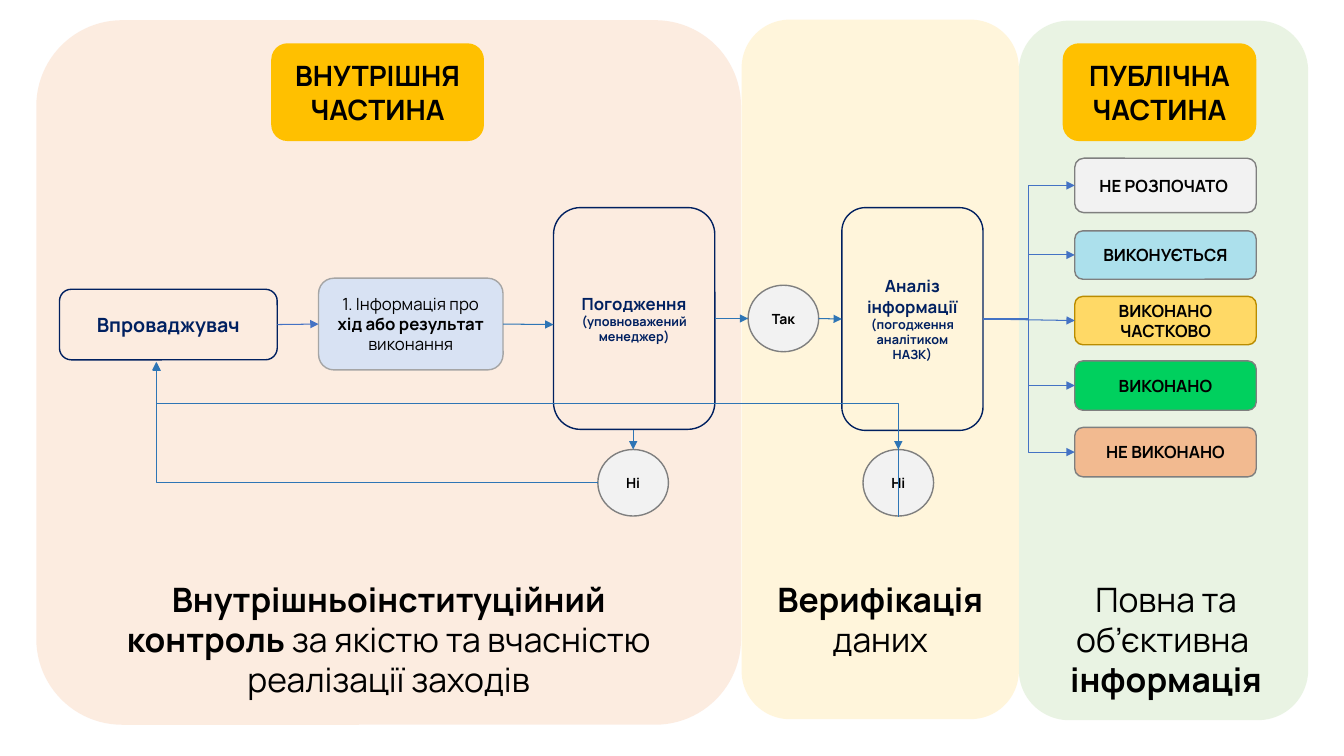
import pptx
import pptx.util
import pptx.dml.color
import pptx.enum.shapes
import pptx.enum.text
from lxml import etree
from pptx.oxml.ns import qn

SHAPE = pptx.enum.shapes.MSO_SHAPE
CONNECTOR = pptx.enum.shapes.MSO_CONNECTOR
CELL = pptx.util.Inches(0.1)  # the slide is a grid of cells, ten to the inch
color = pptx.dml.color.RGBColor.from_string
NAVY, BLACK, GREY, LIGHT = "002060", "000000", "7F7F7F", "F2F2F2"
FLOW, PUBLISH = "2E75B5", "4472C4"
TOP, LEFT, BOTTOM, RIGHT = range(4)

deck = pptx.Presentation()
deck.slide_width = pptx.util.Inches(13.33)
deck.slide_height = pptx.util.Inches(7.5)
page = deck.slides.add_slide(deck.slide_layouts[6])


def add_box(kind, at, text=(), fill=None, opacity=100, line=None, corner=None, ink=BLACK):
    """Add a shape, or a text box if kind is None; text holds paragraphs of (words, size, bold)."""
    place = [round(cells * CELL) for cells in at]
    if kind is None:
        box = page.shapes.add_textbox(*place)
    else:
        box = page.shapes.add_shape(kind, *place)
        box.shadow.inherit = False
        if corner:
            box.adjustments[0] = corner
        if fill:
            box.fill.solid()
            box.fill.fore_color.rgb = color(fill)
            if opacity < 100:
                tint = box.element.spPr.find(qn("a:solidFill"))[0]
                etree.SubElement(tint, qn("a:alpha"), val=str(opacity * 1000))
        else:
            box.fill.background()
        if line:
            box.line.color.rgb = color(line)
            box.line.width = pptx.util.Pt(1)
        else:
            box.line.fill.background()
        box.text_frame.vertical_anchor = pptx.enum.text.MSO_ANCHOR.MIDDLE
    frame = box.text_frame
    frame.word_wrap = True
    for index, spans in enumerate(text):
        para = frame.add_paragraph() if index else frame.paragraphs[0]
        para.alignment = pptx.enum.text.PP_ALIGN.CENTER
        for words, size, bold in spans:
            span = para.add_run()
            span.text = words
            span.font.name = "Manrope"
            span.font.size = pptx.util.Pt(size)
            span.font.bold = bold
            span.font.color.rgb = color(ink)
    return box


def add_arrow(kind, ends, ink):
    """Add a connector with an arrowhead; ends are x1, y1, x2, y2 in cells."""
    arrow = page.shapes.add_connector(kind, *[round(cells * CELL) for cells in ends])
    arrow.line.color.rgb = color(ink)
    arrow.line.width = pptx.util.Pt(0.75)
    outline = arrow.element.spPr.find(qn("a:ln"))
    etree.SubElement(outline, qn("a:tailEnd"), type="triangle")
    etree.SubElement(arrow.element.spPr, qn("a:effectLst"))
    return arrow


# Background panels
for at, fill, corner in [
    ((101.05, 2.05, 28.7, 69.4), "E1EFD8", 0.174),
    ((73.55, 1.95, 27.5, 69.4), "FFF2CC", 0.174),
    ((3.6, 2, 69.9, 69.9), "FBE4D4", 0.122),
]:
    add_box(SHAPE.ROUNDED_RECTANGLE, at, fill=fill, opacity=70, corner=corner)

# Headings
for at, heading in [
    ((26.9, 4.3, 21.1, 9.7), "ВНУТРІШНЯ ЧАСТИНА"),
    ((105.4, 4.3, 19.2, 9.7), "ПУБЛІЧНА ЧАСТИНА"),
]:
    add_box(SHAPE.ROUNDED_RECTANGLE, at, [[(heading, 20, True)]], fill="FFC000")

# Process steps
implementer = add_box(SHAPE.ROUNDED_RECTANGLE, (5.9, 28.7, 21.6, 7),
                      [[("Впроваджувач", 14, True)]], line=NAVY, ink=NAVY)
report = add_box(SHAPE.FLOWCHART_ALTERNATE_PROCESS, (31.6, 27.6, 18.3, 9.1),
                 [[("1. Інформація про ", 12, False), ("хід або результат ", 12, True),
                   ("виконання", 12, False)]], fill="D8E2F3", line="A5A5A5")
approval = add_box(SHAPE.ROUNDED_RECTANGLE, (54.9, 20.6, 16, 22),
                   [[("Погодження ", 12, True), ("(уповноважений менеджер)", 9, True)]],
                   line=NAVY, ink=NAVY)
analysis = add_box(SHAPE.ROUNDED_RECTANGLE, (83.5, 20.6, 14, 22.1),
                   [[("Аналіз інформації ", 12, True),
                     ("(погодження аналітиком НАЗК)", 9, True)]],
                   line=NAVY, ink=NAVY)

# Decisions
for left, top, answer in [(74.2, 28.3, "Так"), (59.3, 44.6, "Ні"), (85.6, 44.6, "Ні")]:
    add_box(SHAPE.FLOWCHART_CONNECTOR, (left, top, 7, 6.6), [[(answer, 10, True)]],
            fill=LIGHT, line=GREY)

# Public statuses, each fed from the analysis step
for top, height, status, fill, opacity, line in [
    (15.7, 5.4, "НЕ РОЗПОЧАТО ", LIGHT, 100, GREY),
    (22.9, 4.8, "ВИКОНУЄТЬСЯ", "ACE0EC", 100, GREY),
    (29.4, 4.8, "ВИКОНАНО ЧАСТКОВО", "FFD966", 100, "BA8C00"),
    (35.8, 4.9, "ВИКОНАНО", "00D05E", 100, GREY),
    (42.4, 4.9, "НЕ ВИКОНАНО", "F4B081", 84, GREY),
]:
    box = add_box(SHAPE.FLOWCHART_ALTERNATE_PROCESS, (106.6, top, 18, height),
                  [[(status, 12, True)]], fill=fill, opacity=opacity, line=line)
    straight = status == "ВИКОНАНО ЧАСТКОВО"
    arrow = add_arrow(CONNECTOR.STRAIGHT if straight else CONNECTOR.ELBOW,
                      (97.5, 31.65, 106.6, top + height / 2), PUBLISH)
    if straight:
        arrow.begin_connect(analysis, RIGHT)
        arrow.end_connect(box, LEFT)

# Straight flow between steps and decisions
for ends, ink, source, source_side, target, target_side in [
    ((27.5, 32.2, 31.6, 32.2), PUBLISH, implementer, RIGHT, report, LEFT),
    ((49.9, 32.2, 54.9, 32.2), FLOW, report, RIGHT, None, None),
    ((70.9, 31.6, 74.2, 31.6), FLOW, approval, RIGHT, None, None),
    ((81.2, 31.6, 83.5, 31.65), FLOW, None, None, analysis, LEFT),
    ((62.8, 42.7, 62.8, 44.6), FLOW, None, None, None, None),
    ((89.1, 42.7, 89.1, 44.6), FLOW, None, None, None, None),
]:
    arrow = add_arrow(CONNECTOR.STRAIGHT, ends, ink)
    if source:
        arrow.begin_connect(source, source_side)
    if target:
        arrow.end_connect(target, target_side)

# Refusals return to the implementer: turned elbows
for ends, preset, turn, bend in [
    ((15.5, 35.9, 59.3, 47.9), "bentConnector2", 180, None),
    ((60, 6.8, 44.7, 80.4), "bentConnector3", 90, 73600),
]:
    arrow = add_arrow(CONNECTOR.ELBOW, ends, FLOW)
    arrow.element.spPr.find(qn("a:xfrm")).set("rot", str(turn * 60000))
    geometry = arrow.element.spPr.find(qn("a:prstGeom"))
    geometry.set("prst", preset)
    if bend:
        etree.SubElement(geometry.find(qn("a:avLst")), qn("a:gd"),
                         name="adj1", fmla=f"val {bend}")

# Captions
for left, width, height, text in [
    (8, 61.1, 13.1, [[("Внутрішньоінституційний контроль ", 24, True),
                      ("за якістю та вчасністю реалізації заходів", 24, False)]]),
    (75.3, 24, 9.1, [[("Верифікація ", 24, True), ("даних", 24, False)]]),
    (101.3, 28.7, 13.1, [[("Повна та об’єктивна ", 24, False)],
                         [("інформація", 24, True)]]),
]:
    add_box(None, (left, 56.9, width, height), text)

deck.save("out.pptx")
